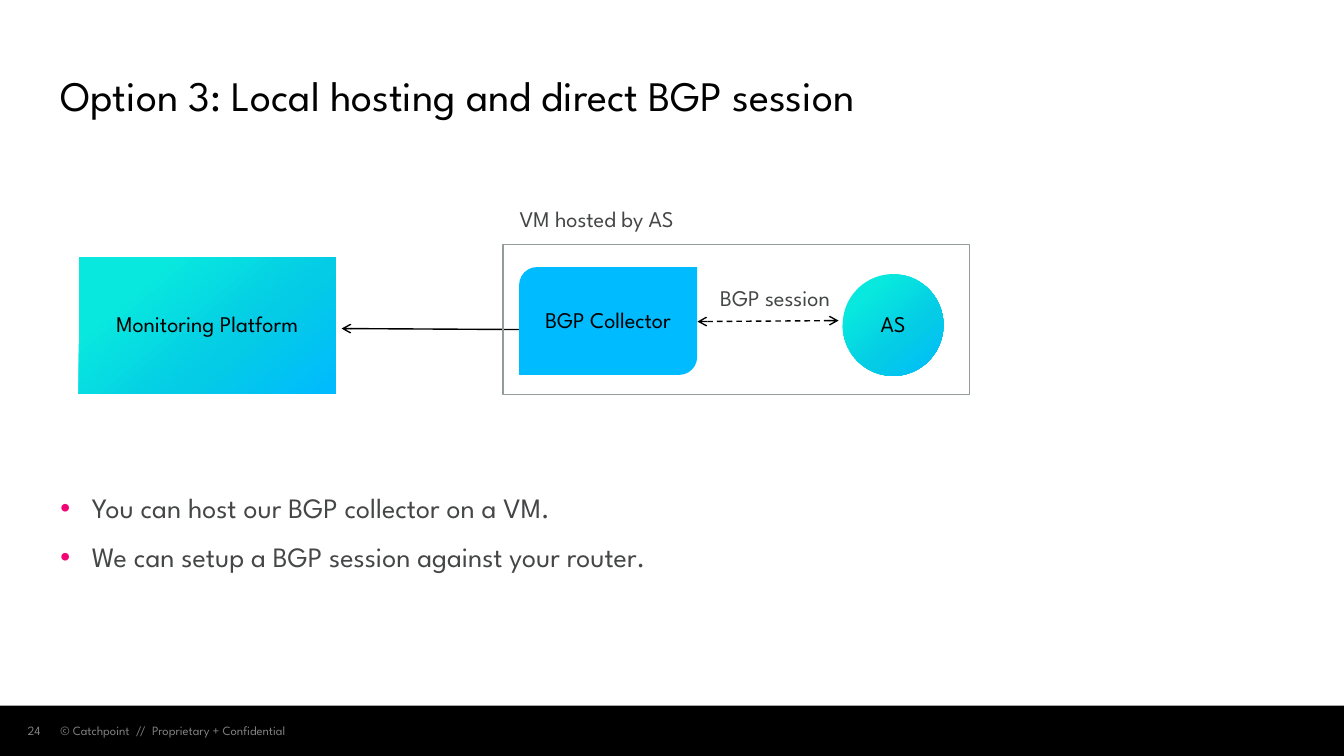
from copy import deepcopy

from lxml import etree
from pptx import Presentation
from pptx.dml.color import RGBColor
from pptx.enum.dml import MSO_LINE
from pptx.enum.shapes import MSO_CONNECTOR, MSO_SHAPE
from pptx.enum.text import MSO_ANCHOR, PP_ALIGN
from pptx.oxml.ns import qn
from pptx.util import Pt

RECT, OVAL = MSO_SHAPE.RECTANGLE, MSO_SHAPE.OVAL
DIAGONAL_ROUNDED = MSO_SHAPE.ROUND_2_DIAG_RECTANGLE
STRAIGHT, DASH = MSO_CONNECTOR.STRAIGHT, MSO_LINE.DASH
TOP, MIDDLE, BOTTOM = MSO_ANCHOR.TOP, MSO_ANCHOR.MIDDLE, MSO_ANCHOR.BOTTOM
LEFT, CENTER, RIGHT = PP_ALIGN.LEFT, PP_ALIGN.CENTER, PP_ALIGN.RIGHT

FONT = "League Spartan"
COLORS = {
    "black": "000000",
    "body": "454647",
    "footer": "808080",
    "frame": "949B9C",
    "bullet": "F20075",
    "aqua": "08E8DE",
    "cyan": "04CBE6",
    "blue": "00BBFF",
}
GRADIENT = [(0.22, "aqua"), (0.63, "cyan"), (1, "blue")]
GRADIENT_ANGLE = 310
BULLET_INDENT = 22.5


def rgb(name):
    return RGBColor.from_string(COLORS[name])


def add_bullet(paragraph):
    props = paragraph._p.get_or_add_pPr()
    props.set("marL", str(Pt(BULLET_INDENT)))
    props.set("indent", str(-Pt(BULLET_INDENT)))
    color = etree.SubElement(props, qn("a:buClr"))
    etree.SubElement(color, qn("a:srgbClr"), val=COLORS["bullet"])
    etree.SubElement(props, qn("a:buFont"), typeface="Arial")
    etree.SubElement(props, qn("a:buChar"), char="•")


def write_text(shape, *lines, size=16, color="black", align=LEFT, anchor=TOP,
               margins=(7.2, 3.6), spacing=None, gap=0, bullets=False):
    frame = shape.text_frame
    frame.word_wrap = True
    frame.vertical_anchor = anchor
    frame.margin_left = frame.margin_right = Pt(margins[0])
    frame.margin_top = frame.margin_bottom = Pt(margins[1])
    for i, line in enumerate(lines):
        paragraph = frame.add_paragraph() if i else frame.paragraphs[0]
        if bullets:
            add_bullet(paragraph)
        paragraph.alignment = align
        if spacing:
            paragraph.line_spacing = spacing
        if i and gap:
            paragraph.space_before = Pt(gap)
        run = paragraph.add_run()
        run.text = line
        run.font.name = FONT
        run.font.size = Pt(size)
        run.font.color.rgb = rgb(color)


def add_text(slide, box, *lines, **style):
    write_text(slide.shapes.add_textbox(*map(Pt, box)), *lines, **style)


def add_label(slide, box, text):
    add_text(slide, box, text, color="body", align=CENTER,
             margins=(7.2, 7.2), spacing=0.95)


def add_block(slide, kind, box, fill=None, line=None):
    block = slide.shapes.add_shape(kind, *map(Pt, box))
    block.shadow.inherit = False
    if fill:
        block.fill.solid()
        block.fill.fore_color.rgb = rgb(fill)
    else:
        block.fill.background()
    if line:
        block.line.color.rgb = rgb(line)
        block.line.width = Pt(1)
    else:
        block.line.fill.background()
    return block


def apply_gradient(block):
    block.fill.gradient()
    block.fill.gradient_angle = GRADIENT_ANGLE
    stop_list = block._element.spPr.find(qn("a:gradFill")).find(qn("a:gsLst"))
    stop_list.append(deepcopy(stop_list[0]))
    for stop, (position, color) in zip(block.fill.gradient_stops, GRADIENT):
        stop.position = position
        stop.color.rgb = rgb(color)


def add_node(slide, kind, box, text, fill=None):
    node = add_block(slide, kind, box, fill)
    if not fill:
        apply_gradient(node)
    write_text(node, text, align=CENTER, anchor=MIDDLE, margins=(0, 3.6),
               spacing=0.9)


def add_arrow(slide, start, end, ends=("headEnd",), dash=None):
    arrow = slide.shapes.add_connector(STRAIGHT, *map(Pt, start + end))
    arrow.line.color.rgb = rgb("black")
    arrow.line.width = Pt(1)
    if dash:
        arrow.line.dash_style = dash
    for tag in ends:
        etree.SubElement(arrow.line._get_or_add_ln(), qn(f"a:{tag}"), type="arrow")
    etree.SubElement(arrow._element.spPr, qn("a:effectLst"))


def main():
    prs = Presentation()
    prs.slide_width, prs.slide_height = Pt(960), Pt(540)
    slide = prs.slides.add_slide(prs.slide_layouts[6])

    # Footer
    add_block(slide, RECT, (0, 504, 960, 36), fill="black")
    footer = {"size": 9, "color": "footer", "anchor": MIDDLE}
    add_text(slide, (36, 504, 280, 36),
             "© Catchpoint  //  Proprietary + Confidential", **footer)
    add_text(slide, (0, 504, 36, 36), "24", align=RIGHT, **footer)

    # Title
    add_text(slide, (36, 21.6, 888, 68.4),
             "Option 3: Local hosting and direct BGP session",
             size=30, anchor=BOTTOM, spacing=0.9)

    # Diagram: platform, collector and autonomous system
    add_arrow(slide, (244, 234.7), (371.2, 235.4))
    add_node(slide, RECT, (56.2, 183.6, 183.6, 97.5), "Monitoring Platform")
    add_node(slide, DIAGONAL_ROUNDED, (370.8, 190.8, 127.2, 77),
             "BGP Collector", fill="blue")
    add_node(slide, OVAL, (601.9, 195.8, 72, 72.7), "AS")
    add_arrow(slide, (599, 229), (498.2, 229.7),
              ends=("headEnd", "tailEnd"), dash=DASH)
    add_block(slide, RECT, (359.3, 174.7, 333.4, 107), line="frame")
    add_label(slide, (287.3, 140.4, 277.9, 34.6), "VM hosted by AS")
    add_label(slide, (414.7, 197.3, 277.9, 34.6), "BGP session")

    # Key points
    add_text(slide, (36, 348.5, 888, 137.5),
             "You can host our BGP collector on a VM.",
             "We can setup a BGP session against your router.",
             size=20, color="body", spacing=0.95, gap=12, bullets=True)

    prs.save("out.pptx")


if __name__ == "__main__":
    main()
